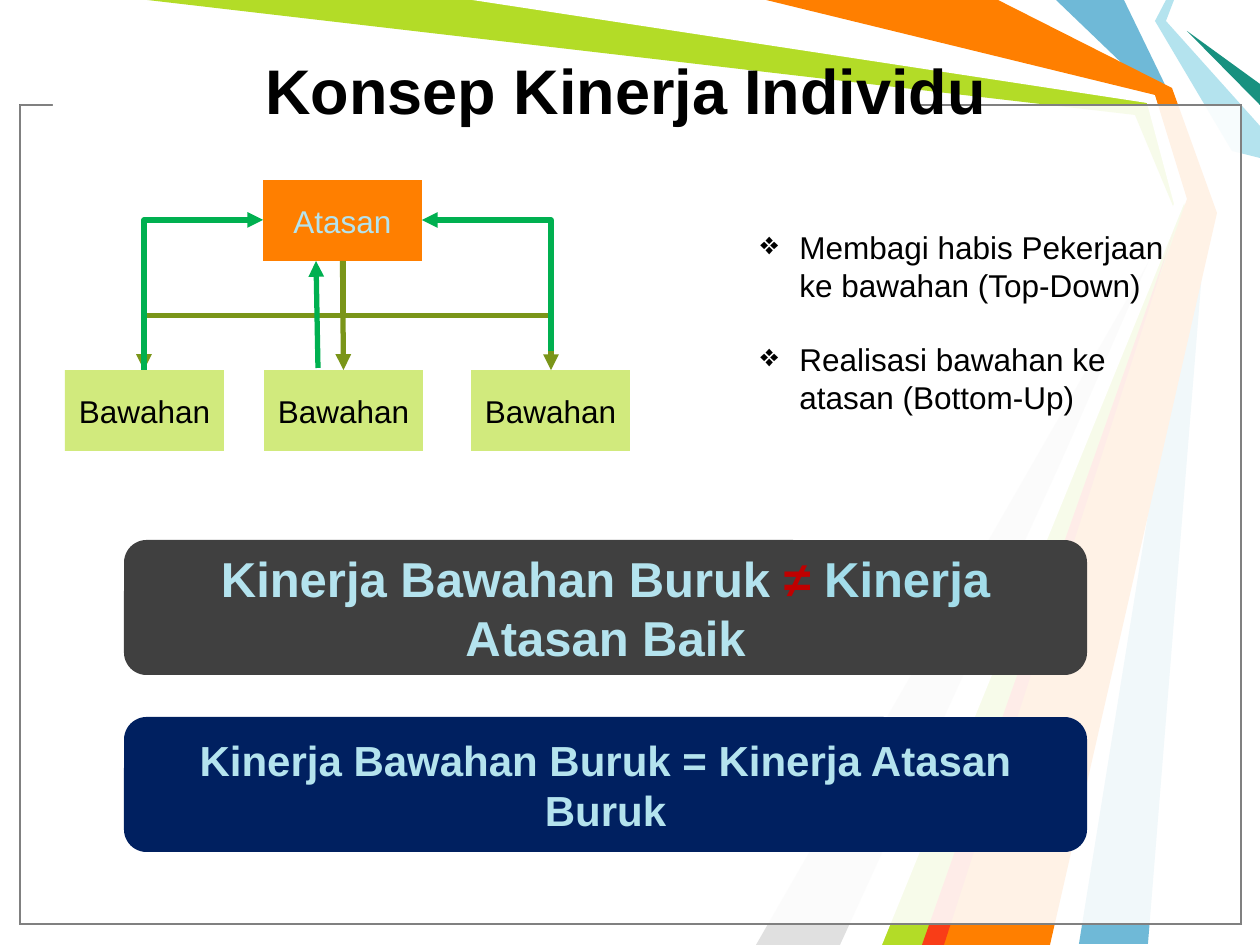
import dataclasses

import pptx
import pptx.dml.color
import pptx.enum.shapes
import pptx.enum.text
import pptx.oxml
import pptx.oxml.ns
import pptx.util

SCALE = 914400 / 126
SHAPE = pptx.enum.shapes.MSO_SHAPE
CONNECTOR = pptx.enum.shapes.MSO_CONNECTOR
ALIGN = pptx.enum.text.PP_ALIGN
ANCHOR = pptx.enum.text.MSO_ANCHOR


@dataclasses.dataclass(frozen=True)
class Theme:
    """Colours, font and type sizes of the slide."""
    font: str = "Arial"
    title_size: int = 36
    large_size: int = 28
    medium_size: int = 24
    body_size: int = 18
    black: str = "000000"
    white: str = "FFFFFF"
    grey: str = "808080"
    silver: str = "E0E0E0"
    blue: str = "6FB9D7"
    lime: str = "B3DC27"
    pale_lime: str = "D1EA7D"
    aqua: str = "B4E3EE"
    deep_aqua: str = "A3DDEA"
    teal: str = "189180"
    orange: str = "FF7F00"
    red: str = "F93D17"
    dark_red: str = "C00000"
    olive: str = "7A9519"
    green: str = "00B050"
    charcoal: str = "404040"
    navy: str = "002060"


THEME = Theme()


def emu(*lengths):
    """Turn px lengths into EMU."""
    return [pptx.util.Emu(round(length * SCALE)) for length in lengths]


def rgb(colour):
    """Return the colour object for a hex string."""
    return pptx.dml.color.RGBColor.from_string(colour)


def add_xml(parent, tag, **attributes):
    """Append an element in the drawing namespace and return it."""
    element = pptx.oxml.parse_xml(f"<a:{tag} {pptx.oxml.ns.nsdecls('a')}/>")
    for name, value in attributes.items():
        element.set(name, value)
    parent.append(element)
    return element


def paint(shape, fill, line=None, alpha=None):
    """Give a shape its fill, outline and opacity, without a shadow."""
    shape.shadow.inherit = False
    shape.fill.solid()
    shape.fill.fore_color.rgb = rgb(fill)
    if alpha:
        colour = shape.fill._xPr.find(".//" + pptx.oxml.ns.qn("a:srgbClr"))
        add_xml(colour, "alpha", val=str(alpha * 1000))
    if line:
        shape.line.color.rgb = rgb(line)
        shape.line.width = pptx.util.Pt(0.75)
    else:
        shape.line.fill.background()


def write(box, spans, size, bold=False, align=ALIGN.CENTER, anchor=ANCHOR.MIDDLE, bullet=None, indent=0):
    """Write (text, colour) spans as one formatted paragraph."""
    frame = box.text_frame
    frame.word_wrap = True
    frame.vertical_anchor = anchor
    para = frame.paragraphs[0]
    para.alignment = align
    if bullet:
        properties = para._p.get_or_add_pPr()
        hang = emu(indent)[0]
        properties.set("marL", str(hang))
        properties.set("indent", str(-hang))
        add_xml(properties, "buChar", char=bullet)
    for text, colour in spans:
        span = para.add_run()
        span.text = text
        span.font.name = THEME.font
        span.font.size = pptx.util.Pt(size)
        span.font.bold = bold
        span.font.color.rgb = rgb(colour)


def add_box(page, kind, left, top, width, height, fill, **outline):
    """Add a painted preset shape."""
    box = page.shapes.add_shape(kind, *emu(left, top, width, height))
    paint(box, fill, **outline)
    return box


def add_arrow(page, start, end, colour, elbow=None):
    """Add an arrow, straight or with an elbow that leaves vertically."""
    kind = CONNECTOR.STRAIGHT
    if elbow:
        kind = CONNECTOR.ELBOW
        middle_x, middle_y = (start[0] + end[0]) / 2, (start[1] + end[1]) / 2
        start, end = [(middle_x + y - middle_y, middle_y - x + middle_x) for x, y in (start, end)]
    arrow = page.shapes.add_connector(kind, *emu(*start, *end))
    arrow.line.color.rgb = rgb(colour)
    arrow.line.width = pptx.util.Pt(3)
    add_xml(arrow.line._get_or_add_ln(), "tailEnd", type="triangle")
    properties = arrow._element.spPr
    add_xml(properties, "effectLst")
    if elbow:
        properties.find(pptx.oxml.ns.qn("a:xfrm")).set("rot", "5400000")
        properties.find(pptx.oxml.ns.qn("a:prstGeom")).set("prst", elbow)
    return arrow


def add_backdrop(page, left, top, width, height):
    """Draw the coloured ribbons and the translucent frame."""
    right, bottom = left + width, top + height
    ribbons = [
        (THEME.blue, [(1124, 0), (1171, 97), (1207, 210), (1148, 944), (1079, 944), (1197, 210), (1155, 95), (1056, 0)]),
        (THEME.lime, [(147, 0), (483, 0), (1152, 98), (1187, 213), (935, 945), (872, 945), (1178, 218), (1135, 115)]),
        (THEME.silver, [(840, 945), (1168, 228), (756, 945)]),
        (THEME.white, [(472, 0), (1147, 103), (1174, 204), (850, 945), (882, 945), (1186, 199), (1155, 95), (756, 0)]),
        (THEME.aqua, [(1166, 0), (1155, 21), (1232, 151), (right, 158), (right, 126), (1166, 21), (1174, 0)]),
        (THEME.teal, [(right, 105), (1187, 31), (right, 84)]),
        (THEME.orange, [(766, 0), (998, 0), (1172, 88), (1217, 213), (1050, 945), (924, 945), (1187, 199), (1155, 95)]),
        (THEME.red, [(922, bottom), (1174, 231), (944, bottom)]),
    ]
    for colour, points in ribbons:
        builder = page.shapes.build_freeform(left + points[0][0], top + points[0][1], scale=SCALE)
        builder.add_line_segments([(left + x, top + y) for x, y in points[1:]])
        paint(builder.convert_to_shape(), colour)
    for line in (THEME.black, THEME.grey):
        add_box(page, SHAPE.RECTANGLE, left + 20, top + 105, width - 39, height - 126, THEME.white, line=line, alpha=69)
    add_box(page, SHAPE.RECTANGLE, left + 53, top + 93, 860, 21, THEME.white)


def add_title(page, left, top, width, height):
    """Place the slide title."""
    box = page.shapes.add_textbox(*emu(left, top, width, height))
    box.text_frame.margin_top = emu(13)[0]
    write(box, [("Konsep Kinerja Individu", THEME.black)], THEME.title_size, bold=True, anchor=ANCHOR.TOP)


def add_chart_of_staff(page, left, top, width, height):
    """Draw the superior, three subordinates and the arrows between them."""
    box_width, box_height = 159, 81
    row = top + height - box_height
    superior = add_box(page, SHAPE.RECTANGLE, left + 198, top, box_width, box_height, THEME.orange)
    write(superior, [("Atasan", THEME.aqua)], THEME.body_size)
    staff = []
    for offset in (199, 0, width - box_width):
        box = add_box(page, SHAPE.RECTANGLE, left + offset, row, box_width, box_height, THEME.pale_lime)
        write(box, [("Bawahan", THEME.black)], THEME.body_size)
        staff.append(box)
    source = (left + 278, top + box_height)
    first = (left + box_width // 2, row)
    last = (left + width - box_width // 2, row)
    side = top + box_height // 2
    add_arrow(page, source, first, THEME.olive, elbow="bentConnector3")
    down = add_arrow(page, source, (source[0] + 1, row), THEME.olive)
    down.begin_connect(superior, 2)
    down.end_connect(staff[0], 0)
    add_arrow(page, source, last, THEME.olive, elbow="bentConnector3")
    add_arrow(page, first, (left + 198, side), THEME.green, elbow="bentConnector2")
    add_arrow(page, (last[0], row - 19), (left + 198 + box_width, side), THEME.green, elbow="bentConnector2")
    add_arrow(page, (left + 253, row - 2), (left + 251, top + box_height), THEME.green)


def add_points(page, left, top, width, height):
    """Place the two bulleted remarks."""
    remarks = ("Membagi habis Pekerjaan ke bawahan (Top-Down)", "Realisasi bawahan ke atasan (Bottom-Up)")
    for index, remark in enumerate(remarks):
        box = page.shapes.add_textbox(*emu(left, top + index * (height - 89), width, 89))
        write(box, [(remark, THEME.black)], THEME.body_size, align=ALIGN.LEFT, anchor=ANCHOR.TOP, bullet="❖", indent=39)


def add_banners(page, left, top, width, height):
    """Place the two rounded conclusion banners."""
    unequal = [("Kinerja Bawahan Buruk ", THEME.aqua), ("≠ ", THEME.dark_red),
               ("Kinerja ", THEME.deep_aqua), ("Atasan Baik", THEME.aqua)]
    equal = [("Kinerja Bawahan Buruk = Kinerja Atasan Buruk", THEME.aqua)]
    banners = [(THEME.charcoal, unequal, THEME.large_size), (THEME.navy, equal, THEME.medium_size)]
    for index, (fill, spans, size) in enumerate(banners):
        box = add_box(page, SHAPE.ROUNDED_RECTANGLE, left, top + index * (height - 135), width, 135, fill)
        write(box, spans, size, bold=True)


def main():
    """Build the slide and save it."""
    deck = pptx.Presentation()
    deck.slide_width, deck.slide_height = emu(1260, 945)
    page = deck.slides.add_slide(deck.slide_layouts[6])
    add_backdrop(page, 0, 0, 1260, 945)
    add_title(page, 59, 39, 1134, 74)
    add_chart_of_staff(page, 65, 180, 565, 271)
    add_points(page, 748, 222, 449, 201)
    add_banners(page, 124, 540, 963, 312)
    deck.save("out.pptx")


if __name__ == "__main__":
    main()
